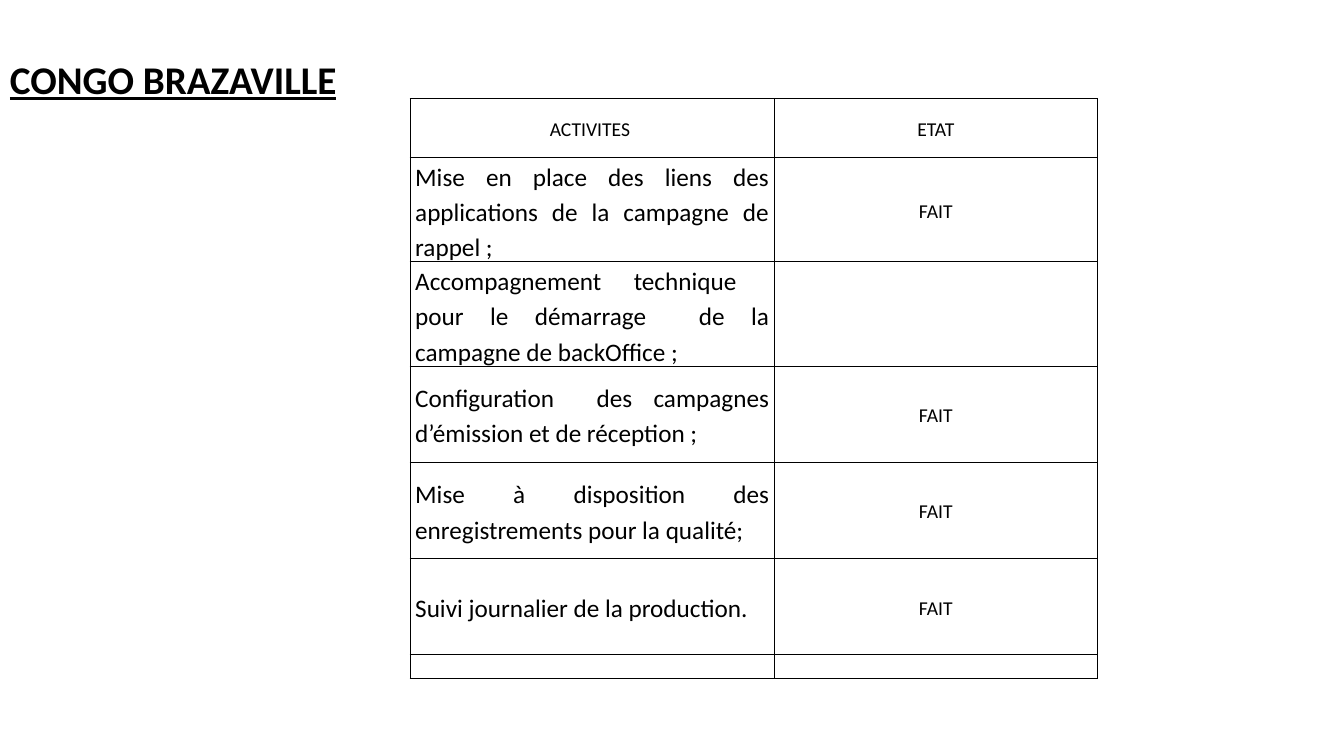
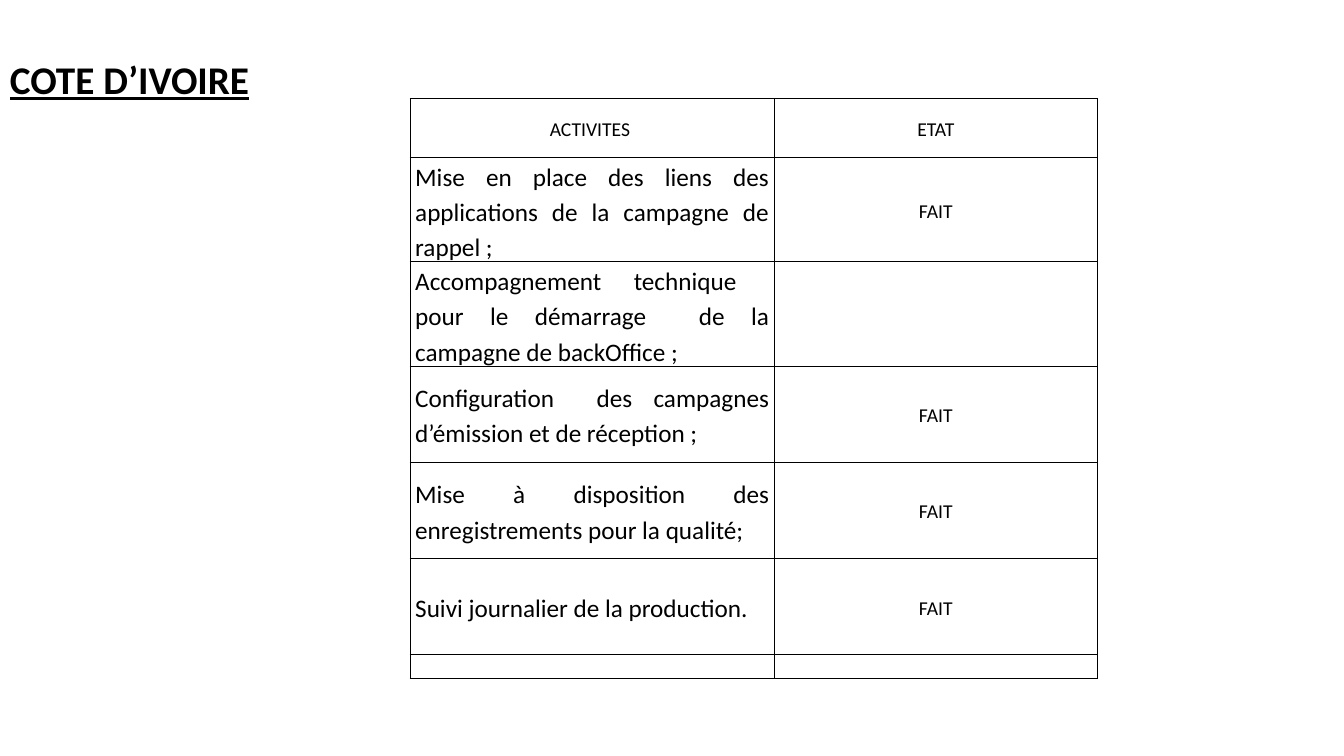
from lxml.etree import SubElement
from pptx import Presentation
from pptx.dml.color import RGBColor
from pptx.enum.text import MSO_ANCHOR, PP_ALIGN
from pptx.oxml.ns import qn
from pptx.util import Pt

BLACK = RGBColor(0x00, 0x00, 0x00)
WHITE = RGBColor(0xFF, 0xFF, 0xFF)

COUNTRIES = ["CONGO BRAZAVILLE", "COTE D’IVOIRE"]
HEADINGS = ("ACTIVITES ", "ETAT")
ACTIVITIES = [
    ("Mise en place des liens des applications de la campagne de rappel ;", "FAIT"),
    ("Accompagnement technique  pour le démarrage  de la campagne de backOffice ;", ""),
    ("Configuration  des campagnes d’émission et de réception ;", "FAIT"),
    ("Mise à disposition des enregistrements pour la qualité;", "FAIT"),
    ("Suivi journalier de la production.", "FAIT"),
    ("", ""),
]
COLUMN_WIDTHS = [260, 231]
ROW_HEIGHTS = [42, 67.5, 67.5, 68.7, 68.7, 68.7, 17.3]


def apply(target, values):
    for name, value in values.items():
        setattr(target, name, value)


class StatusDeck:
    """Holds the shared style and the current slide."""

    title_font = {"name": "Calibri", "size": Pt(28), "bold": True, "underline": True}
    label_font = {"name": "Calibri", "size": Pt(14)}
    activity_font = {"name": "Calibri", "size": Pt(18)}
    title_frame = {"word_wrap": True, "vertical_anchor": MSO_ANCHOR.MIDDLE}
    label_cell = {"margin_left": Pt(2.5), "margin_right": Pt(2.5)}
    activity_cell = {"margin_left": Pt(3.6), "margin_right": Pt(3.6)}
    any_cell = {"margin_top": 0, "margin_bottom": 0,
                "vertical_anchor": MSO_ANCHOR.MIDDLE}

    def __init__(self):
        self.deck = Presentation()
        apply(self.deck, {"slide_width": Pt(960), "slide_height": Pt(540)})
        self.page = None

    def add_page(self):
        self.page = self.deck.slides.add_slide(self.deck.slide_layouts[6])
        fill = self.page.background.fill
        fill.solid()
        fill.fore_color.rgb = WHITE

    def fill_para(self, para, text, font, layout):
        apply(para, layout)
        if text:
            span = para.add_run()
            span.text = text
            apply(span.font, font)
            span.font.color.rgb = BLACK
        else:
            # An empty cell keeps the height of its own text size
            end = para._p.get_or_add_endParaRPr()
            end.set("sz", str(int(font["size"].pt * 100)))

    def title(self, text):
        box = self.page.shapes.add_textbox(0, Pt(30), Pt(292), Pt(57))
        apply(box.text_frame, self.title_frame)
        self.fill_para(box.text_frame.paragraphs[0], text, self.title_font,
                       {"line_spacing": 0.9})

    def borders(self, cell):
        properties = cell._tc.get_or_add_tcPr()
        for side in ("lnL", "lnR", "lnT", "lnB"):
            line = SubElement(properties, qn(f"a:{side}"), w=str(Pt(1)))
            fill = SubElement(line, qn("a:solidFill"))
            SubElement(fill, qn("a:srgbClr"), val=str(BLACK))

    def cell(self, cell, text, is_activity):
        self.borders(cell)
        cell.fill.background()
        apply(cell, self.any_cell)
        apply(cell, self.activity_cell if is_activity else self.label_cell)
        align = PP_ALIGN.JUSTIFY if is_activity else PP_ALIGN.CENTER
        font = self.activity_font if is_activity else self.label_font
        self.fill_para(cell.text_frame.paragraphs[0], text, font,
                       {"alignment": align, "line_spacing": 1.15})

    def status_table(self, rows):
        frame = self.page.shapes.add_table(
            len(rows), len(COLUMN_WIDTHS), Pt(293), Pt(70.5),
            Pt(sum(COLUMN_WIDTHS)), Pt(sum(ROW_HEIGHTS)))
        table = frame.table
        apply(table, {"first_row": False, "horz_banding": False})
        for column, width in zip(table.columns, COLUMN_WIDTHS):
            column.width = Pt(width)
        for row, height in zip(table.rows, ROW_HEIGHTS):
            row.height = Pt(height)
        for r, texts in enumerate(rows):
            for c, text in enumerate(texts):
                is_activity = r > 0 and c == 0 and text != ""
                self.cell(table.cell(r, c), text, is_activity)


def main():
    status = StatusDeck()
    # One page per country, with the same activities
    for country in COUNTRIES:
        status.add_page()
        status.title(country)
        status.status_table([HEADINGS] + ACTIVITIES)
    status.deck.save("out.pptx")


if __name__ == "__main__":
    main()
